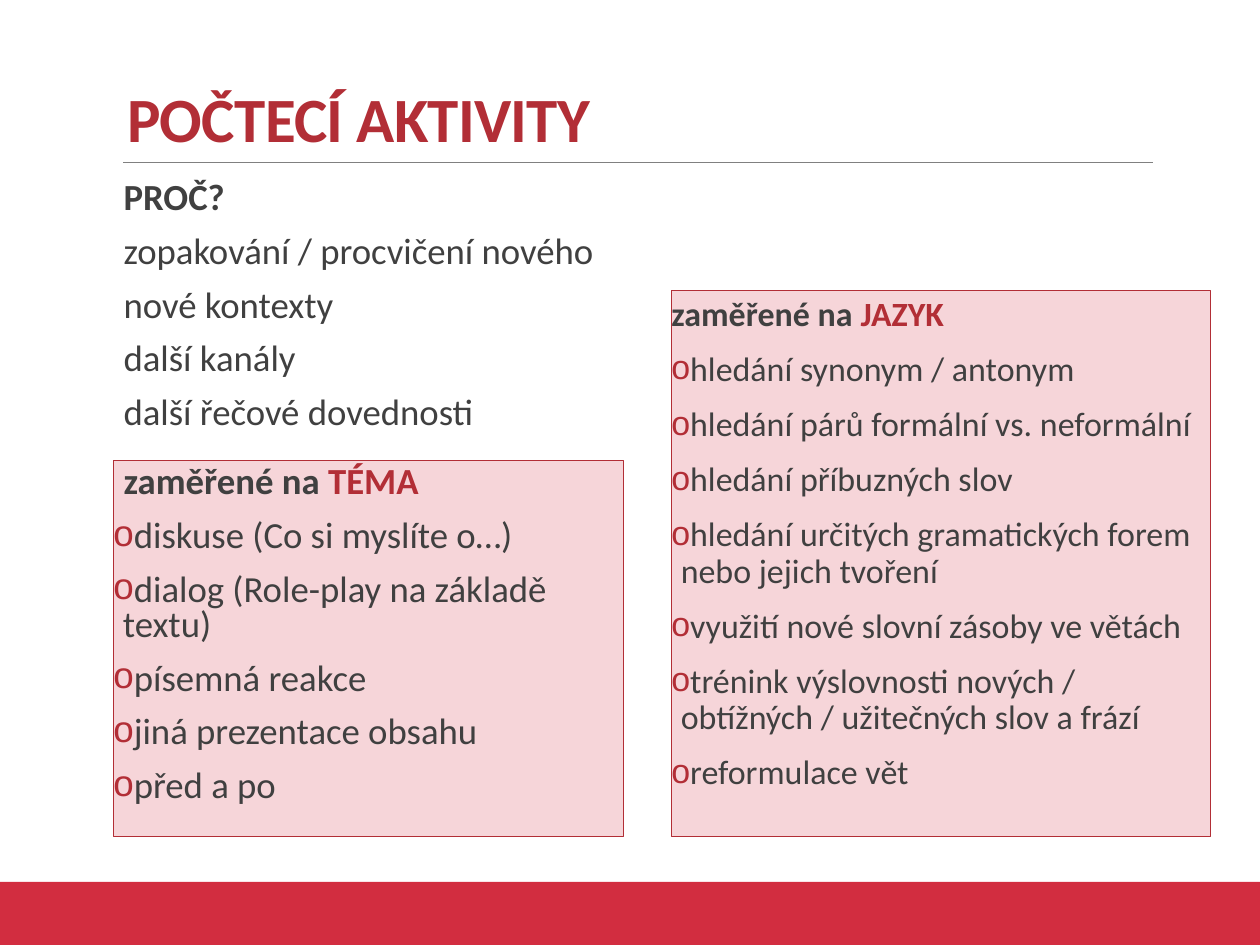
"""Build the slide on post-reading activities."""
from lxml.etree import SubElement
from pptx import Presentation
from pptx.dml.color import RGBColor
from pptx.enum.shapes import MSO_CONNECTOR, MSO_SHAPE
from pptx.enum.text import MSO_ANCHOR, PP_ALIGN
from pptx.oxml.ns import qn
from pptx.util import Pt

COLORS = {"band": "D22D40", "accent": "B22E36", "panel": "F6D5D9",
          "text": "404040", "rule": "808080"}
HANG = 5.4
INSET = 5.8


def add_run(paragraph, text, size, color, bold=False):
    run = paragraph.add_run()
    run.text = text
    run.font.name = "Calibri"
    run.font.size = Pt(size)
    run.font.bold = bold
    run.font.color.rgb = RGBColor.from_string(COLORS[color])
    return run


def add_list(shape, heading, topic, items, size, spacing, heading_indent, bulleted):
    frame = shape.text_frame
    frame.word_wrap = True
    frame.vertical_anchor = MSO_ANCHOR.TOP
    frame.margin_left = frame.margin_right = 0
    frame.margin_top = frame.margin_bottom = Pt(3.6)
    for index, text in enumerate([heading] + items):
        paragraph = frame.paragraphs[0] if index == 0 else frame.add_paragraph()
        paragraph.alignment = PP_ALIGN.LEFT
        paragraph.line_spacing = spacing
        paragraph.space_after = Pt(1.5)
        if index:
            paragraph.space_before = Pt(9)
        properties = paragraph._p.get_or_add_pPr()
        if bulleted and index:
            properties.set("marL", str(Pt(HANG)))
            properties.set("indent", str(Pt(-HANG)))
            bullet_color = SubElement(properties, qn("a:buClr"))
            SubElement(bullet_color, qn("a:srgbClr"), val=COLORS["accent"])
            SubElement(properties, qn("a:buFont"), typeface="Arial")
            SubElement(properties, qn("a:buChar"), char="o")
        else:
            properties.set("marL", str(Pt(heading_indent)))
            properties.set("indent", "0")
        add_run(paragraph, text, size, "text", bold=index == 0)
        if index == 0 and topic:
            add_run(paragraph, topic, size, "accent", bold=True)


presentation = Presentation()
presentation.slide_width = Pt(720)
presentation.slide_height = Pt(540)
slide = presentation.slides.add_slide(presentation.slide_layouts[6])
shapes = slide.shapes

band = shapes.add_shape(MSO_SHAPE.RECTANGLE, 0, Pt(504), Pt(720), Pt(36))
band.shadow.inherit = False
band.fill.solid()
band.fill.fore_color.rgb = RGBColor.from_string(COLORS["band"])
band.line.fill.background()

rule = shapes.add_connector(MSO_CONNECTOR.STRAIGHT, Pt(70.5), Pt(92.9), Pt(658.8), Pt(92.9))
rule.line.color.rgb = RGBColor.from_string(COLORS["rule"])
rule.line.width = Pt(0.5)
SubElement(rule._element.spPr, qn("a:effectLst"))

reasons = shapes.add_textbox(Pt(64.8), Pt(100.8), Pt(291.6), Pt(162.3))
add_list(reasons, "PROČ?", "",
         ["zopakování / procvičení nového", "nové kontexty", "další kanály",
          "další řečové dovednosti"],
         21, 0.8, INSET, False)

title = shapes.add_textbox(Pt(65.5), Pt(20.4), Pt(594), Pt(72))
title.text_frame.word_wrap = True
title.text_frame.vertical_anchor = MSO_ANCHOR.BOTTOM
title_line = title.text_frame.paragraphs[0]
title_line.line_spacing = 0.85
title_run = add_run(title_line, "POČTECÍ AKTIVITY", 36, "accent", bold=True)
title_run._r.get_or_add_rPr().set("spc", "-40")

panels = [
    ((64.8, 263.1, 291.6, 215), "TÉMA",
     ["diskuse (Co si myslíte o…)", "dialog (Role-play na základě textu)",
      "písemná reakce", "jiná prezentace obsahu", "před a po"],
     21, 0.8, INSET),
    ((383.6, 166.1, 308.2, 312), "JAZYK",
     ["hledání synonym / antonym", "hledání párů formální vs. neformální",
      "hledání příbuzných slov",
      "hledání určitých gramatických forem nebo jejich tvoření",
      "využití nové slovní zásoby ve větách",
      "trénink výslovnosti nových / obtížných / užitečných slov a frází",
      "reformulace vět"],
     19.4, 0.9, 0),
]
for place, topic, activities, size, spacing, heading_indent in panels:
    panel = shapes.add_shape(MSO_SHAPE.RECTANGLE, *[Pt(length) for length in place])
    panel.shadow.inherit = False
    panel.fill.solid()
    panel.fill.fore_color.rgb = RGBColor.from_string(COLORS["panel"])
    panel.line.color.rgb = RGBColor.from_string(COLORS["accent"])
    panel.line.width = Pt(0.75)
    add_list(panel, "zaměřené na ", topic, activities, size, spacing, heading_indent, True)

presentation.save("out.pptx")
